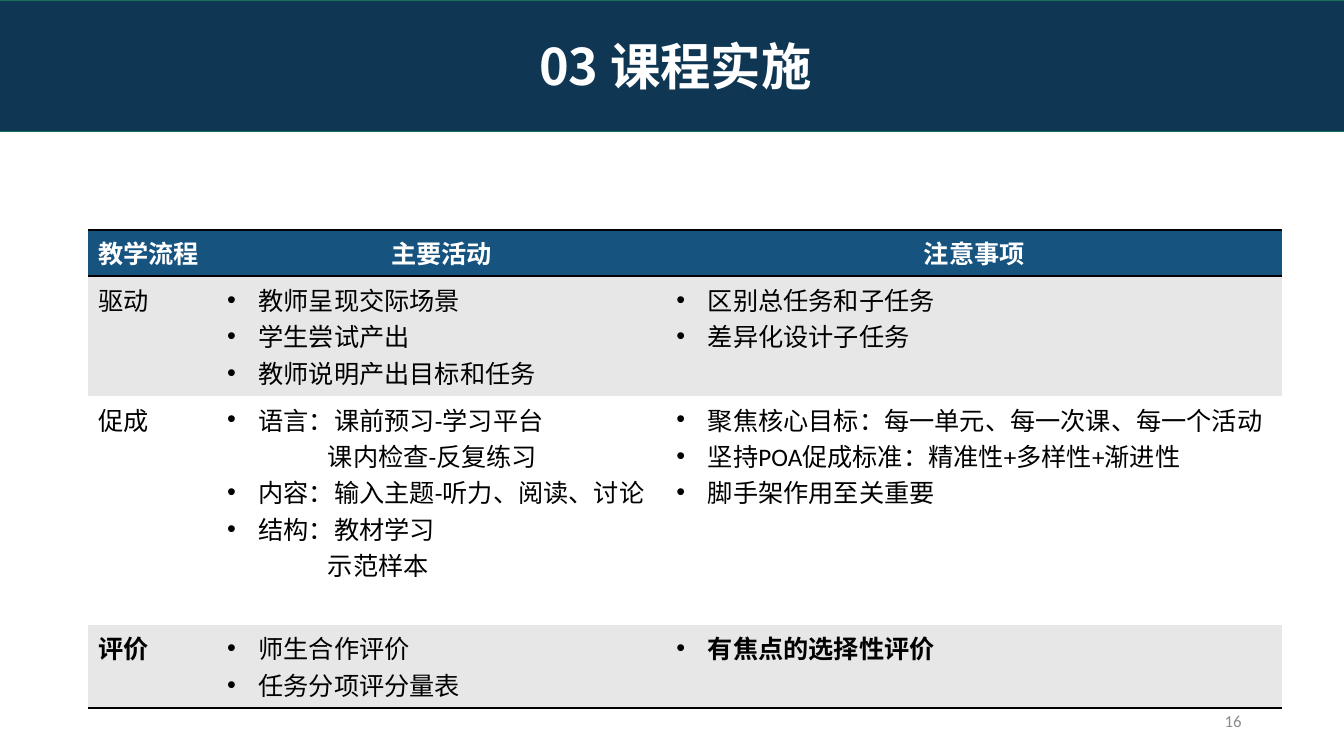
from dataclasses import dataclass

from lxml import etree
from pptx import Presentation
from pptx import util as u
from pptx.dml.color import RGBColor
from pptx.enum import shapes, text
from pptx.oxml import ns

LEFT, CENTER, RIGHT = text.PP_ALIGN.LEFT, text.PP_ALIGN.CENTER, text.PP_ALIGN.RIGHT
NO_STYLE_NO_GRID = "{2D5ABB26-0587-4C30-8999-92F81FD0307C}"


@dataclass(frozen=True)
class Theme:
    banner: str = "0F3754"
    banner_edge: str = "157259"
    header: str = "16537F"
    band: str = "E7E7E7"
    white: str = "FFFFFF"
    ink: str = "000000"
    muted: str = "8C8C8C"
    latin: str = "Calibri"
    chinese: str = "Noto Sans CJK SC"
    title_size: int = 36
    body_size: int = 18
    number_size: int = 12
    rule: float = 1.5
    bullet_indent: float = 22.5
    continuation_indent: float = 72


def color(value):
    return RGBColor.from_string(value)


class SlideBuilder:
    def __init__(self, slide, theme):
        self.slide, self.theme = slide, theme

    def style(self, paragraph, size, ink, bold=False, align=LEFT, latin=None):
        paragraph.alignment = align
        for run in paragraph.runs:
            font = run.font
            font.size, font.bold = u.Pt(size), bold
            font.name = latin or self.theme.latin
            font.color.rgb = color(ink)
            east_asian = etree.SubElement(run._r.get_or_add_rPr(), ns.qn("a:ea"))
            east_asian.set("typeface", self.theme.chinese)

    def banner(self, title, left, top, width, height):
        t = self.theme
        banner = self.slide.shapes.add_shape(
            shapes.MSO_SHAPE.RECTANGLE, *map(u.Pt, (left, top, width, height)))
        banner.shadow.inherit = False
        banner.fill.solid()
        banner.fill.fore_color.rgb = color(t.banner)
        banner.line.color.rgb = color(t.banner_edge)
        banner.line.width = u.Pt(1)
        frame = banner.text_frame
        frame.text = title
        frame.vertical_anchor = text.MSO_ANCHOR.MIDDLE
        self.style(frame.paragraphs[0], t.title_size, t.white, True, CENTER, t.chinese)

    def page_number(self, number, left, top, width, height):
        t = self.theme
        frame = self.slide.shapes.add_textbox(
            *map(u.Pt, (left, top, width, height))).text_frame
        frame.word_wrap = True
        frame.vertical_anchor = text.MSO_ANCHOR.MIDDLE
        frame.text = number
        self.style(frame.paragraphs[0], t.number_size, t.muted, align=RIGHT)

    def border(self, cell, *sides):
        """Rule the given sides, "T" before "B", ahead of the cell's fill."""
        properties = cell._tc.get_or_add_tcPr()
        for position, side in enumerate(sides):
            line = etree.Element(ns.qn("a:ln" + side), w=str(u.Pt(self.theme.rule)))
            fill = etree.SubElement(line, ns.qn("a:solidFill"))
            etree.SubElement(fill, ns.qn("a:srgbClr"), val=self.theme.ink)
            properties.insert(position, line)

    def indent(self, paragraph, bulleted):
        """Hang a bullet, or align a line under the text of the one above."""
        t = self.theme
        properties = paragraph._p.get_or_add_pPr()
        if bulleted:
            properties.set("marL", str(u.Pt(t.bullet_indent)))
            properties.set("indent", str(-u.Pt(t.bullet_indent)))
            etree.SubElement(properties, ns.qn("a:buFont"), typeface="Arial")
            etree.SubElement(properties, ns.qn("a:buChar"), char="•")
        else:
            properties.set("marL", str(u.Pt(t.continuation_indent)))
            properties.set("indent", "0")

    def cell(self, cell, content, fill, ink, bold=False, align=LEFT, listed=False):
        """Fill a cell; in a list, a line starting with ">" carries no bullet."""
        cell.fill.solid()
        cell.fill.fore_color.rgb = color(fill)
        lines = content.split("\n")
        cell.text_frame.text = "\n".join(line.lstrip(">") for line in lines)
        for line, paragraph in zip(lines, cell.text_frame.paragraphs):
            self.style(paragraph, self.theme.body_size, ink, bold, align)
            if listed:
                self.indent(paragraph, not line.startswith(">"))

    def table(self, headings, stages, bold_texts, left, top, widths, heights):
        t = self.theme
        frame = self.slide.shapes.add_table(
            len(heights), len(widths),
            *map(u.Pt, (left, top, sum(widths), sum(heights))))
        table = frame.table
        table._tbl.tblPr.find(ns.qn("a:tableStyleId")).text = NO_STYLE_NO_GRID
        for column, width in zip(table.columns, widths):
            column.width = u.Pt(width)
        for row, height in zip(table.rows, heights):
            row.height = u.Pt(height)
        for c, heading in enumerate(headings):
            self.cell(table.cell(0, c), heading, t.header, t.white, True,
                      CENTER if c else LEFT)
            self.border(table.cell(0, c), "T", "B")
        for r, stage in enumerate(stages, 1):
            for c, content in enumerate(stage):
                self.cell(table.cell(r, c), content, t.band if r % 2 else t.white,
                          t.ink, content in bold_texts, listed=c > 0)
        for c in range(len(headings)):
            self.border(table.cell(len(stages), c), "B")


HEADINGS = ("教学流程", "主要活动", "注意事项")
STAGES = (
    ("驱动",
     "教师呈现交际场景\n学生尝试产出\n教师说明产出目标和任务",
     "区别总任务和子任务\n差异化设计子任务"),
    ("促成",
     "语言：课前预习-学习平台\n>课内检查-反复练习\n内容：输入主题-听力、阅读、讨论\n"
     "结构：教材学习\n>示范样本",
     "聚焦核心目标：每一单元、每一次课、每一个活动\n"
     "坚持POA促成标准：精准性+多样性+渐进性\n脚手架作用至关重要"),
    ("评价",
     "师生合作评价\n任务分项评分量表",
     "有焦点的选择性评价"),
)
EMPHASIZED = ("评价", "有焦点的选择性评价")


def main():
    presentation = Presentation()
    presentation.slide_width, presentation.slide_height = u.Pt(960), u.Pt(540)
    slide = presentation.slides.add_slide(presentation.slide_layouts[6])
    builder = SlideBuilder(slide, Theme())
    builder.table(HEADINGS, STAGES, EMPHASIZED, left=63, top=164,
                  widths=(92, 321, 440), heights=(33, 85, 163.5, 59))
    builder.page_number("16", 678, 500.5, 216, 29)
    builder.banner("03 课程实施", -1.5, 0, 968, 94)
    presentation.save("out.pptx")


if __name__ == "__main__":
    main()
